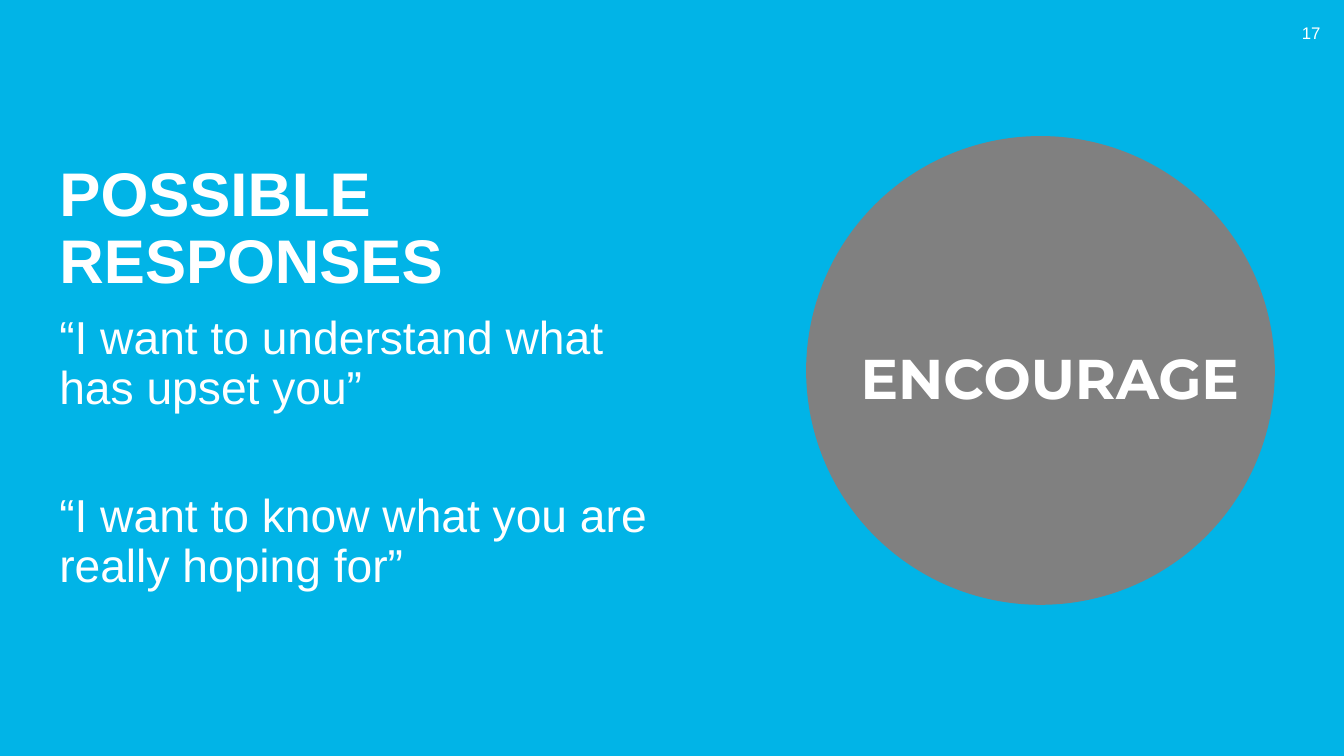
from pptx import Presentation
from pptx.dml.color import RGBColor
from pptx.enum import shapes, text
from pptx.util import Pt

hues = {"blue": "01B4E7", "gray": "808080", "white": "FFFFFF"}
left, mid, right = text.PP_ALIGN.LEFT, text.PP_ALIGN.CENTER, text.PP_ALIGN.RIGHT
top, center, bottom = (text.MSO_ANCHOR.TOP, text.MSO_ANCHOR.MIDDLE,
                       text.MSO_ANCHOR.BOTTOM)


def place(item, box):
    for name, size in zip(("left", "top", "width", "height"), box):
        setattr(item, name, Pt(size))


def write(item, lines, anchor, font, para):
    frame = item.text_frame
    frame.word_wrap = True
    frame.auto_size = text.MSO_AUTO_SIZE.NONE
    frame.vertical_anchor = anchor
    frame.text = "\n".join(lines)
    for part in frame.paragraphs:
        for name, value in para.items():
            setattr(part, name, value)
        run = part.runs[0]
        for name, value in font.items():
            setattr(run.font, name, value)
        run.font.color.rgb = RGBColor.from_string(hues["white"])


deck = Presentation()
deck.slide_width, deck.slide_height = Pt(960), Pt(540)
slide = deck.slides.add_slide(deck.slide_layouts[5])

title = slide.shapes.title
place(title, (35.3, 126.7, 465, 88.9))
write(title, ["POSSIBLE RESPONSES"], bottom,
      {"name": "Arial", "size": Pt(44), "bold": True},
      {"alignment": left, "line_spacing": 0.9, "space_before": Pt(10)})

forms = [
    (shapes.MSO_SHAPE.RECTANGLE, (0, 0, 960, 540), "blue"),
    (shapes.MSO_SHAPE.OVAL, (575.8, 97.2, 334.8, 334.8), "gray"),
]
for kind, box, hue in forms:
    form = slide.shapes.add_shape(kind, 0, 0, 0, 0)
    place(form, box)
    form.shadow.inherit = False
    form.fill.solid()
    form.fill.fore_color.rgb = RGBColor.from_string(hues[hue])
    form.line.fill.background()
    if hue == "blue":
        title.element.addprevious(form.element)

quotes = ["“I want to understand what has upset you”",
          "“I want to know what you are really hoping for”"]
labels = [
    ((35.3, 221, 456.5, 218.9), quotes, top,
     {"name": "Arial", "size": Pt(33)},
     {"alignment": left, "line_spacing": 0.9, "space_before": Pt(56)}),
    ((917.3, 9, 33.1, 28.8), ["17"], center,
     {"name": "Arial", "size": Pt(12)}, {"alignment": right}),
    ((582.5, 241.9, 334.8, 55.4), ["ENCOURAGE"], top,
     {"name": "Montserrat", "size": Pt(40), "bold": True}, {"alignment": mid}),
]
for box, lines, anchor, font, para in labels:
    label = slide.shapes.add_textbox(0, 0, 0, 0)
    place(label, box)
    write(label, lines, anchor, font, para)
    label.text_frame.paragraphs[0].space_before = Pt(0)

deck.save("out.pptx")
